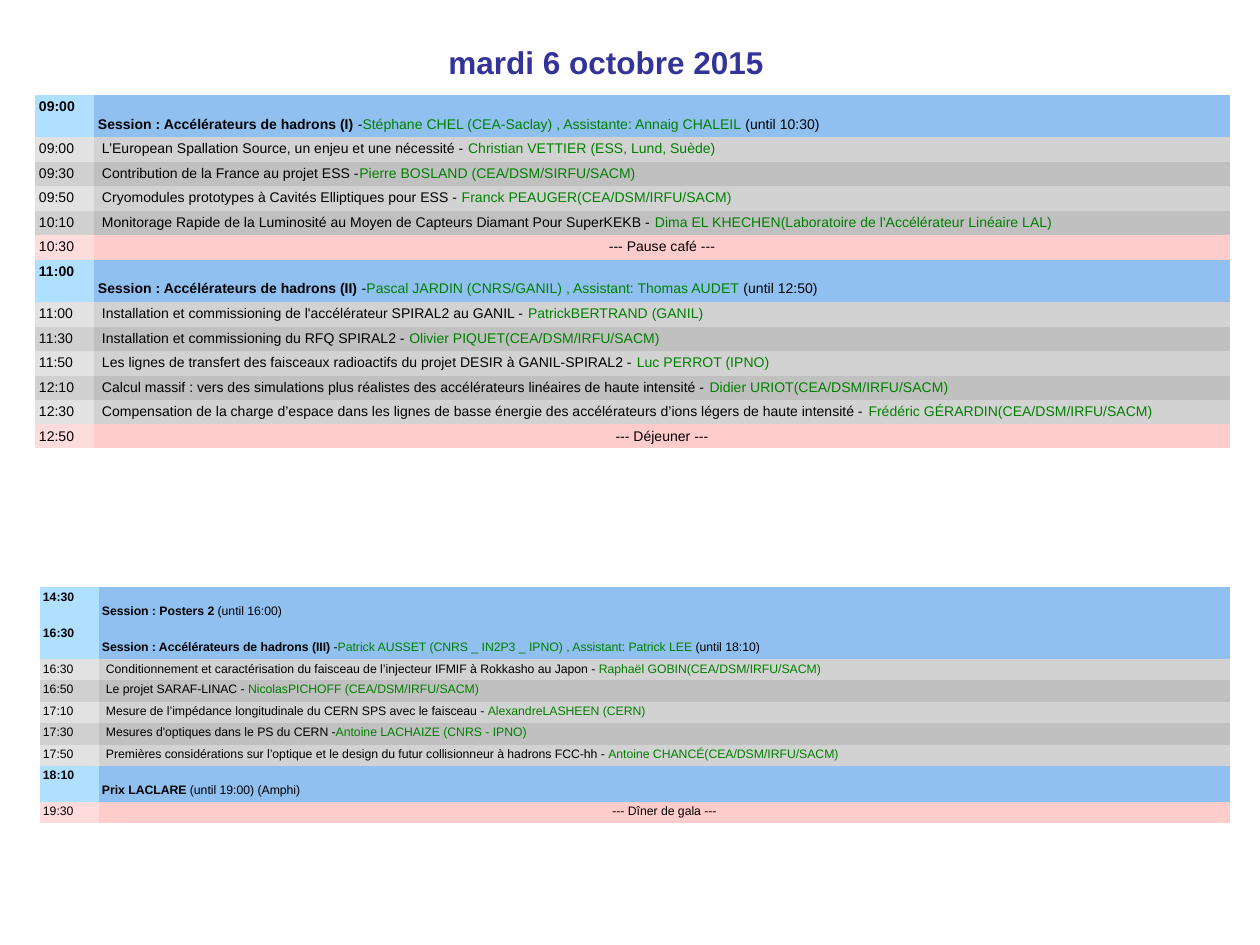
import pptx
import pptx.util
import pptx.dml.color
import pptx.enum.text
from pptx.oxml.ns import qn

RGBColor = pptx.dml.color.RGBColor
ALIGN = pptx.enum.text.PP_ALIGN
ANCHOR = pptx.enum.text.MSO_ANCHOR

INK = RGBColor(0x00, 0x00, 0x00)
GREEN = RGBColor(0x00, 0x80, 0x00)
NAVY = RGBColor(0x33, 0x33, 0x99)
# Fill pairs: time column, topic column
BLUE = RGBColor(0xB0, 0xE0, 0xFF), RGBColor(0x90, 0xC0, 0xF0)
PINK = RGBColor(0xFF, 0xDC, 0xDC), RGBColor(0xFF, 0xCC, 0xCC)
LIGHT = RGBColor(0xE2, 0xE2, 0xE2), RGBColor(0xD2, 0xD2, 0xD2)
DARK = RGBColor(0xD0, 0xD0, 0xD0), RGBColor(0xC0, 0xC0, 0xC0)

FONT = "Arial"
PLAIN = "{2D5ABB26-0587-4C30-8999-92F81FD0307C}"  # no style, no grid
SESSION, TALK, BREAK = "session", "talk", "break"

# Rows: kind, time, topic, speaker or chair, closing words
MORNING = [
    (SESSION, "09:00", "Session : Accélérateurs de hadrons (I)",
     "Stéphane CHEL (CEA-Saclay) , Assistante: Annaig CHALEIL ", "(until 10:30)"),
    (TALK, "09:00", "L’European Spallation Source, un enjeu et une nécessité - ",
     "Christian VETTIER (ESS, Lund, Suède)", ""),
    (TALK, "09:30", "Contribution de la France au projet ESS -",
     "Pierre BOSLAND (CEA/DSM/SIRFU/SACM)", ""),
    (TALK, "09:50", "Cryomodules prototypes à Cavités Elliptiques pour ESS - ",
     "Franck PEAUGER(CEA/DSM/IRFU/SACM)", ""),
    (TALK, "10:10", "Monitorage Rapide de la Luminosité au Moyen de Capteurs "
     "Diamant Pour SuperKEKB - ",
     "Dima EL KHECHEN(Laboratoire de l'Accélérateur Linéaire LAL)", ""),
    (BREAK, "10:30", "--- Pause café ---", "", ""),
    (SESSION, "11:00", "Session : Accélérateurs de hadrons (II)",
     "Pascal JARDIN (CNRS/GANIL) , Assistant: Thomas AUDET ", "(until 12:50)"),
    (TALK, "11:00", "Installation et commissioning de l'accélérateur SPIRAL2 au GANIL - ",
     "PatrickBERTRAND (GANIL)", ""),
    (TALK, "11:30", "Installation et commissioning du RFQ SPIRAL2 - ",
     "Olivier PIQUET(CEA/DSM/IRFU/SACM)", ""),
    (TALK, "11:50", "Les lignes de transfert des faisceaux radioactifs du projet "
     "DESIR à GANIL-SPIRAL2 - ", "Luc PERROT (IPNO)", ""),
    (TALK, "12:10", "Calcul massif : vers des simulations plus réalistes des "
     "accélérateurs linéaires de haute intensité - ",
     "Didier URIOT(CEA/DSM/IRFU/SACM)", ""),
    (TALK, "12:30", "Compensation de la charge d’espace dans les lignes de basse "
     "énergie des accélérateurs d’ions légers de haute intensité - ",
     "Frédéric GÉRARDIN(CEA/DSM/IRFU/SACM)", ""),
    (BREAK, "12:50", "--- Déjeuner ---", "", ""),
]
EVENING = [
    (SESSION, "14:30", "Session : Posters 2", "", " (until 16:00)"),
    (SESSION, "16:30", "Session : Accélérateurs de hadrons (III)",
     "Patrick AUSSET (CNRS _ IN2P3 _ IPNO) , Assistant: Patrick LEE ", "(until 18:10)"),
    (TALK, "16:30", "Conditionnement et caractérisation du faisceau de l’injecteur "
     "IFMIF à Rokkasho au Japon - ", "Raphaël GOBIN(CEA/DSM/IRFU/SACM)", ""),
    (TALK, "16:50", "Le projet SARAF-LINAC - ",
     "NicolasPICHOFF (CEA/DSM/IRFU/SACM)", ""),
    (TALK, "17:10", "Mesure de l’impédance longitudinale du CERN SPS avec le faisceau - ",
     "AlexandreLASHEEN (CERN)", ""),
    (TALK, "17:30", "Mesures d'optiques dans le PS du CERN -",
     "Antoine LACHAIZE (CNRS - IPNO)", ""),
    (TALK, "17:50", "Premières considérations sur l’optique et le design du futur "
     "collisionneur à hadrons FCC-hh - ", "Antoine CHANCÉ(CEA/DSM/IRFU/SACM)", ""),
    (SESSION, "18:10", "Prix LACLARE", "", " (until 19:00) (Amphi)"),
    (BREAK, "19:30", "--- Dîner de gala ---", "", ""),
]


def px(count):
    return pptx.util.Emu(round(count * 914400 / 126))


def set_font(font, size, color, bold=False):
    font.name, font.size, font.bold = FONT, pptx.util.Pt(size), bold
    font.color.rgb = color


def add_title(slide, text):
    title = slide.shapes.title
    title.left, title.top, title.width, title.height = map(px, (434, 37, 344, 50))
    frame = title.text_frame
    frame.text = text
    frame.word_wrap = False
    frame.auto_size = pptx.enum.text.MSO_AUTO_SIZE.NONE
    frame.vertical_anchor = ANCHOR.MIDDLE
    frame.paragraphs[0].alignment = ALIGN.CENTER
    set_font(frame.paragraphs[0].font, 18, NAVY, True)


def fill_cell(cell, fill, parts, size, pad):
    """Write (text, colour, bold) parts into a filled cell."""
    cell.fill.solid()
    cell.fill.fore_color.rgb = fill
    cell.margin_left = cell.margin_right = px(pad)
    cell.margin_top = cell.margin_bottom = px(pad)
    para = cell.text_frame.paragraphs[0]
    set_font(para.font, size, INK)
    for text, color, bold in parts:
        if text:
            run = para.add_run()
            run.text = text
            set_font(run.font, size, color, bold)


def fill_row(cells, row, fills, size, pad):
    kind, time, topic, who, tail = row
    head = kind == SESSION
    parts = [(topic, INK, head)]
    if head and who:
        parts.append((" -", INK, False))
    parts += [(who, GREEN, False), (tail, INK, False)]
    fill_cell(cells[0], fills[0], [(time, INK, head)], size, pad)
    fill_cell(cells[1], fills[1], parts, size, pad)
    if head:
        cells[1].vertical_anchor = ANCHOR.BOTTOM
        cells[1].margin_bottom = px(5)
    elif kind == TALK:
        cells[1].margin_left = px(pad + 4)
    else:
        cells[1].text_frame.paragraphs[0].alignment = ALIGN.CENTER


def add_agenda(slide, rows, left, top, size, pad, tall, steps):
    """Session rows are tall; the rows after each one alternate in step."""
    wide = 1230 - left
    frame = slide.shapes.add_table(len(rows), 2, px(left), px(top), px(wide), px(tall))
    table = frame.table
    table.first_row = table.horz_banding = False
    for style in frame.element.iter(qn("a:tableStyleId")):
        style.text = PLAIN
    table.columns[0].width, table.columns[1].width = px(59), px(wide - 59)
    total = count = 0
    for line, row in zip(table.rows, rows):
        if row[0] == SESSION:
            high, fills, count = tall, BLUE, 0
        else:
            high = steps[count % 2]
            fills = PINK if row[0] == BREAK else (LIGHT, DARK)[count % 2]
            count += 1
        line.height = px(high)
        total += high
        fill_row(line.cells, row, fills, size, pad)
    frame.height = px(total)


def main():
    deck = pptx.Presentation()
    deck.slide_width, deck.slide_height = px(1260), px(945)
    slide = deck.slides.add_slide(deck.slide_layouts[5])
    # Day
    add_title(slide, "mardi 6 octobre 2015")
    # Morning, then afternoon and evening
    add_agenda(slide, MORNING, 35, 95, 8, 4, 42, (25, 24))
    add_agenda(slide, EVENING, 40, 587, 7, 3, 36, (21, 22))
    deck.save("out.pptx")


if __name__ == "__main__":
    main()
